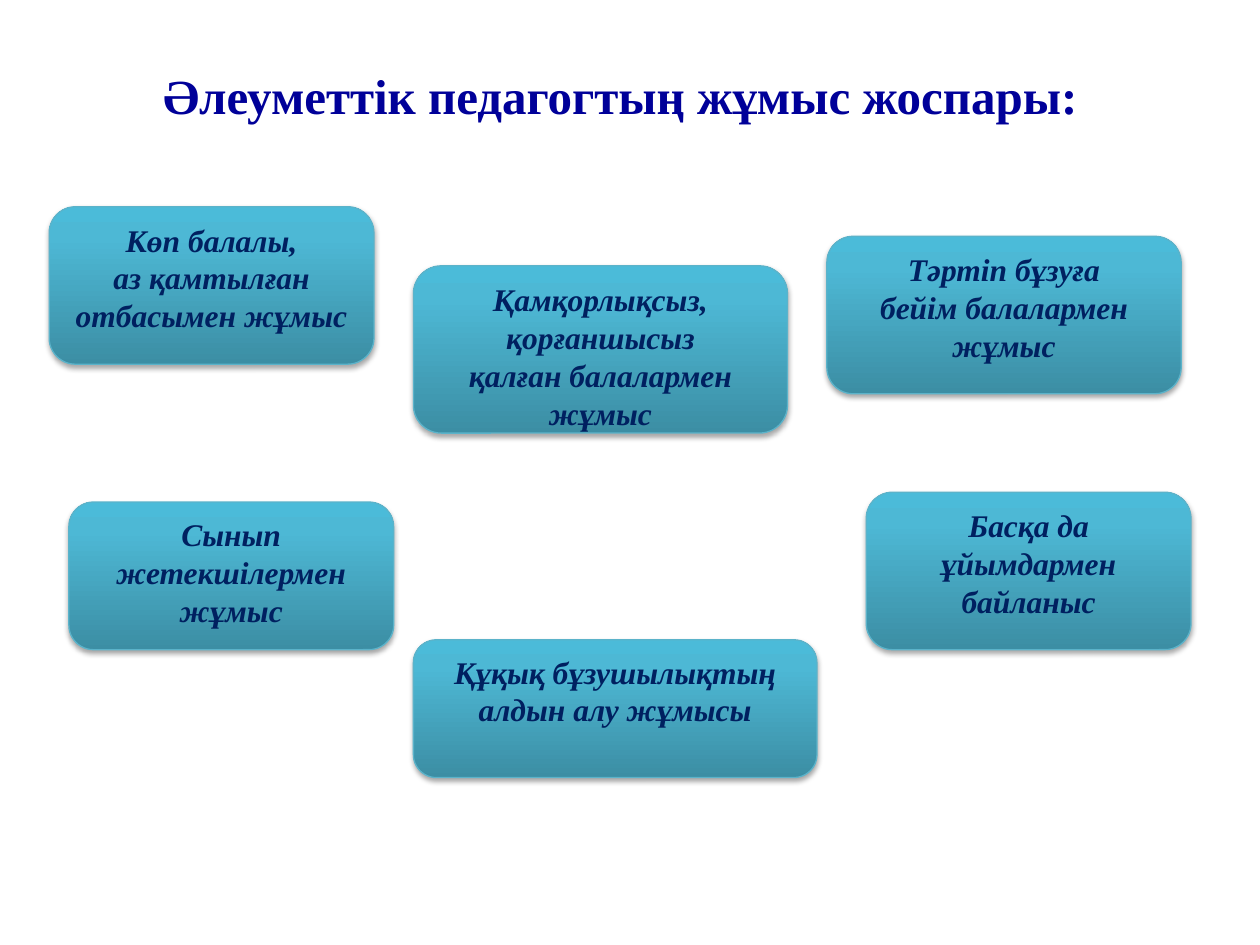
from copy import deepcopy
from dataclasses import dataclass

from pptx import Presentation
from pptx.dml.color import RGBColor
from pptx.enum.shapes import MSO_SHAPE
from pptx.enum.text import MSO_ANCHOR, MSO_AUTO_SIZE, PP_ALIGN
from pptx.oxml import parse_xml
from pptx.oxml.ns import nsdecls, qn
from pptx.util import Pt


@dataclass(frozen=True)
class Theme:
    font: str = "Times New Roman"
    title_color: str = "000099"
    title_size: int = 28
    task_color: str = "002060"
    task_size: int = 18
    line_color: str = "5BB3CA"
    gradient: tuple = ((0, "3C8EA4"), (0.8, "4DB8D5"), (1, "4BBBD9"))


THEME = Theme()
GRID = 5.625

TASKS = [
    ((7, 51, 33, 15), "Сынып жетекшілермен\nжұмыс"),
    ((5, 21, 33, 16), "Көп балалы,\nаз қамтылған отбасымен жұмыс"),
    ((42, 27, 38, 17), "Қамқорлықсыз,\nқорғаншысыз\nқалған балалармен жұмыс"),
    ((84, 24, 36, 16), "Тәртіп бұзуға\nбейім балалармен жұмыс"),
    ((88, 50, 33, 16), "Басқа да\nұйымдармен\nбайланыс"),
    ((42, 65, 41, 14), "Құқық бұзушылықтың алдын алу жұмысы"),
]


def format_text(text_frame, size, color, italic=False):
    text_frame.word_wrap = True
    text_frame.vertical_anchor = MSO_ANCHOR.TOP
    for paragraph in text_frame.paragraphs:
        paragraph.alignment = PP_ALIGN.CENTER
        for run in paragraph.runs:
            run.font.name = THEME.font
            run.font.size = Pt(size)
            run.font.bold = True
            run.font.italic = italic
            run.font.color.rgb = RGBColor.from_string(color)


def add_title(slide, text):
    title = slide.shapes.title
    title.left, title.top = Pt(12 * GRID), Pt(6 * GRID)
    title.width, title.height = Pt(102 * GRID), Pt(41)
    title.text_frame.text = text
    title.text_frame.auto_size = MSO_AUTO_SIZE.SHAPE_TO_FIT_TEXT
    format_text(title.text_frame, THEME.title_size, THEME.title_color)


def fill_gradient(shape):
    shape.fill.gradient()
    shape.fill.gradient_angle = 90
    stop_list = shape.element.spPr.find(".//" + qn("a:gsLst"))
    stop_list.append(deepcopy(stop_list[-1]))
    for stop, (position, color) in zip(shape.fill.gradient_stops, THEME.gradient):
        stop.position = position
        stop.color.rgb = RGBColor.from_string(color)


def add_shadow(shape):
    shape.shadow.inherit = False
    shape.element.spPr.find(qn("a:effectLst")).append(parse_xml(
        f'<a:outerShdw {nsdecls("a")} blurRad="{Pt(3.1)}" dist="{Pt(1.8)}" '
        'dir="5400000" rotWithShape="0"><a:srgbClr val="000000">'
        '<a:alpha val="35000"/></a:srgbClr></a:outerShdw>'
    ))


def add_task(slide, cells, text):
    bounds = [Pt(cell * GRID) for cell in cells]
    shape = slide.shapes.add_shape(MSO_SHAPE.ROUNDED_RECTANGLE, *bounds)
    fill_gradient(shape)
    shape.line.color.rgb = RGBColor.from_string(THEME.line_color)
    shape.line.width = Pt(0.75)
    add_shadow(shape)
    shape.text_frame.text = text
    format_text(shape.text_frame, THEME.task_size, THEME.task_color, italic=True)


def main():
    presentation = Presentation()
    presentation.slide_width, presentation.slide_height = Pt(720), Pt(540)
    slide = presentation.slides.add_slide(presentation.slide_layouts[5])
    add_title(slide, "Әлеуметтік педагогтың жұмыс жоспары:")
    for cells, text in TASKS:
        add_task(slide, cells, text)
    presentation.save("out.pptx")


if __name__ == "__main__":
    main()
